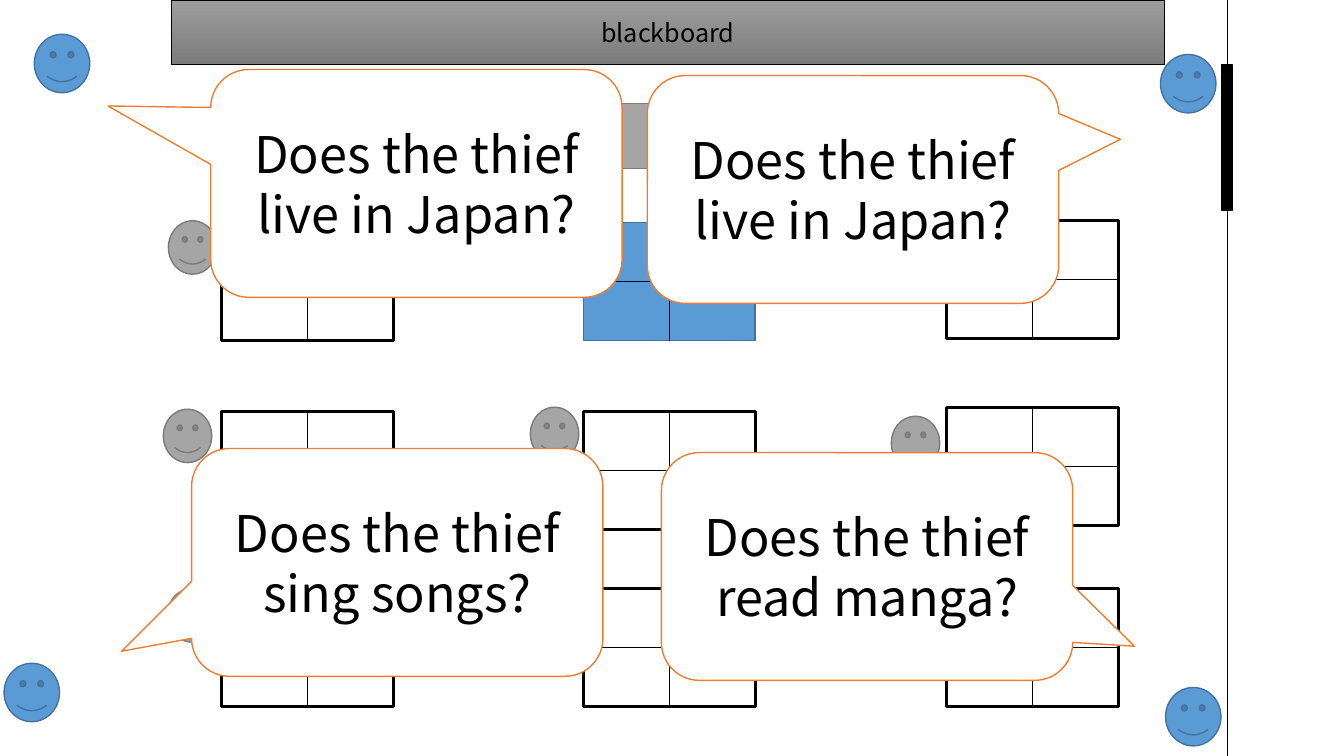
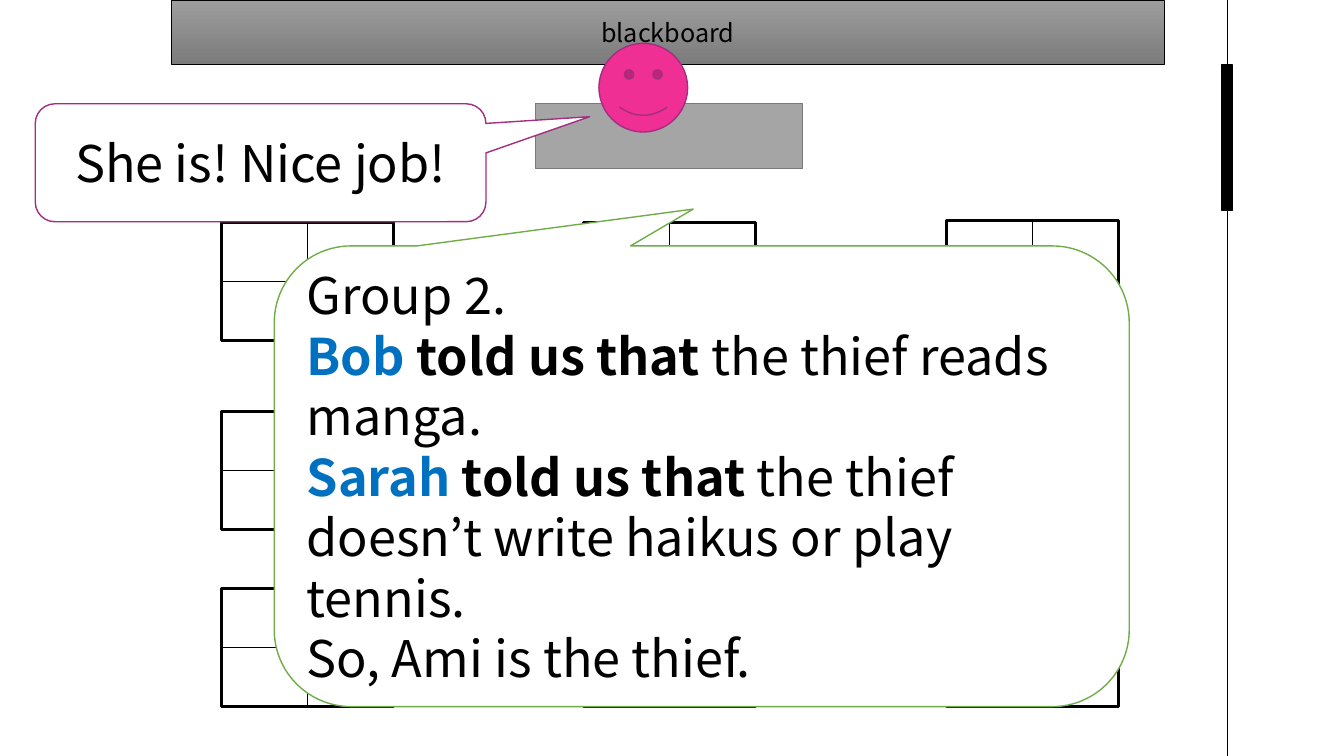
import pptx
import pptx.util
import pptx.dml.color
import pptx.enum.shapes
import pptx.enum.text
import pptx.oxml.ns
import lxml.etree
from dataclasses import dataclass

Inches = pptx.util.Inches
Shape = pptx.enum.shapes.MSO_SHAPE
Align = pptx.enum.text.PP_ALIGN


@dataclass(frozen=True)
class Theme:
    font: str = "Noto Sans CJK JP"
    label_size: int = 18
    speech_size: int = 36
    ink: str = "000000"
    paper: str = "FFFFFF"
    name: str = "0070C0"
    board_top: str = "9D9D9D"
    board_bottom: str = "7C7C7C"
    gray: str = "A5A5A5"
    gray_line: str = "7A7A7A"
    blue: str = "5B9BD5"
    blue_line: str = "43739E"
    pink: str = "EF2F94"
    pink_line: str = "A22E81"
    orange: str = "ED7D31"
    green: str = "70AD47"
    thin: float = 0.5
    normal: float = 1
    thick: float = 2.25


THEME = Theme()

BOARD = (1.7, 0, 9.85, 0.64)
TEACHER_DESK = (5.31, 1.03, 2.65, 0.64)
DOOR = (12.12, 0.64, 0.1, 1.45)
WALL_X = 12.17
SLIDE_W, SLIDE_H = 13.33, 7.5

GROUP_SIZE = (1.7, 1.17)
GROUP_COLUMNS = [
    (2.2, (2.21, 4.08, 5.84)),
    (5.79, (2.21, 4.08, 5.84)),
    (9.39, (2.19, 4.04, 5.84)),
]

INFORMANT_SIZE = (0.55, 0.58)
INFORMANTS = [(0.34, 0.34), (11.51, 0.54), (0.04, 6.58), (11.56, 6.82)]
STUDENT_SIZE = (0.48, 0.53)
STUDENTS = [(5.26, 4.04), (1.67, 2.19), (1.62, 4.06), (8.84, 4.13), (1.66, 5.84)]
TEACHER = (5.94, 0.43, 0.88, 0.88)

QUESTION_SIZE = (4.08, 2.26)
QUESTIONS = [
    ("Does the thief read manga?", (6.56, 4.49), (0.65, 0.35)),
    ("Does the thief live in Japan?", (2.09, 0.69), (-0.75, -0.34)),
    ("Does the thief sing songs?", (1.9, 4.45), (-0.67, 0.39)),
    ("Does the thief live in Japan?", (6.42, 0.75), (0.65, -0.22)),
]


def testimony(name, fact):
    return [(name, True, THEME.name), (" told us that ", True, THEME.ink), (fact, False, THEME.ink)]


def plain(text):
    return [(text, False, THEME.ink)]


ANSWER = [
    plain("Group 2."),
    testimony("Bob", "the thief reads manga."),
    testimony("Sarah", "the thief doesn’t write haikus or play tennis."),
    plain("So, Ami is the thief."),
]
ANSWER_BOX, ANSWER_TIP = (2.72, 2.44, 8.48, 4.57), (-0.01, -0.58)
PRAISE = [plain("She is! Nice job!")]
PRAISE_BOX, PRAISE_TIP = (0.35, 1.03, 4.47, 1.17), (0.73, -0.39)


def rgb(color):
    return pptx.dml.color.RGBColor.from_string(color)


def add_box(slide, kind, box, fill, line, width=THEME.normal):
    shape = slide.shapes.add_shape(kind, *map(Inches, box))
    shape.shadow.inherit = False
    shape.fill.solid()
    shape.fill.fore_color.rgb = rgb(fill)
    shape.line.color.rgb = rgb(line)
    shape.line.width = pptx.util.Pt(width)
    return shape


def add_rule(slide, start=(0, 0), end=(0, 0)):
    rule = slide.shapes.add_connector(
        pptx.enum.shapes.MSO_CONNECTOR.STRAIGHT, *map(Inches, start + end))
    rule.line.color.rgb = rgb(THEME.ink)
    rule.line.width = pptx.util.Pt(THEME.thin)
    lxml.etree.SubElement(rule._element.spPr, pptx.oxml.ns.qn("a:effectLst"))
    return rule


def write(shape, paragraphs, size, align):
    frame = shape.text_frame
    frame.word_wrap = True
    frame.vertical_anchor = pptx.enum.text.MSO_ANCHOR.MIDDLE
    for index, runs in enumerate(paragraphs):
        paragraph = frame.add_paragraph() if index else frame.paragraphs[0]
        paragraph.alignment = align
        for text, bold, color in runs:
            run = paragraph.add_run()
            run.text = text
            run.font.name = THEME.font
            run.font.size = pptx.util.Pt(size)
            run.font.bold = bold
            run.font.color.rgb = rgb(color)


def add_speech(slide, box, tip, paragraphs, line, align=Align.CENTER):
    bubble = add_box(slide, Shape.ROUNDED_RECTANGULAR_CALLOUT, box, THEME.paper, line)
    bubble.adjustments[0], bubble.adjustments[1] = tip
    write(bubble, paragraphs, THEME.speech_size, align)


def add_group(slide, corner, chosen):
    colors = (THEME.blue, THEME.blue_line) if chosen else (THEME.paper, THEME.ink, THEME.thick)
    desks = add_box(slide, Shape.RECTANGLE, corner + GROUP_SIZE, *colors)
    for first_side, last_side in ((0, 2), (1, 3)):
        seam = add_rule(slide)
        seam.begin_connect(desks, first_side)
        seam.end_connect(desks, last_side)


def add_classroom(deck, chosen=None):
    slide = deck.slides.add_slide(deck.slide_layouts[6])
    board = add_box(slide, Shape.RECTANGLE, BOARD, THEME.gray, THEME.ink, THEME.thin)
    board.fill.gradient()
    board.fill.gradient_angle = 270
    for stop, color in zip(board.fill.gradient_stops, (THEME.board_top, THEME.board_bottom)):
        stop.color.rgb = rgb(color)
    board.fill.gradient_stops[0].position = 0
    board.fill.gradient_stops[1].position = 1
    write(board, [plain("blackboard")], THEME.label_size, Align.CENTER)
    add_box(slide, Shape.RECTANGLE, TEACHER_DESK, THEME.gray, THEME.gray_line)
    for column, (left, tops) in enumerate(GROUP_COLUMNS):
        for row, top in enumerate(tops):
            add_group(slide, (left, top), (column, row) == chosen)
    add_rule(slide, (WALL_X, 0), (WALL_X, SLIDE_H))
    add_box(slide, Shape.RECTANGLE, DOOR, THEME.ink, THEME.ink)
    return slide


def add_question_slide(deck):
    slide = add_classroom(deck, chosen=(1, 0))
    for corners, size, fill, line in (
        (INFORMANTS, INFORMANT_SIZE, THEME.blue, THEME.blue_line),
        (STUDENTS, STUDENT_SIZE, THEME.gray, THEME.gray_line),
    ):
        for corner in corners:
            add_box(slide, Shape.SMILEY_FACE, corner + size, fill, line)
    for question, corner, tip in QUESTIONS:
        add_speech(slide, corner + QUESTION_SIZE, tip, [plain(question)], THEME.orange)


def add_answer_slide(deck):
    slide = add_classroom(deck)
    add_box(slide, Shape.SMILEY_FACE, TEACHER, THEME.pink, THEME.pink_line)
    add_speech(slide, ANSWER_BOX, ANSWER_TIP, ANSWER, THEME.green, Align.LEFT)
    add_speech(slide, PRAISE_BOX, PRAISE_TIP, PRAISE, THEME.pink_line)


def main():
    deck = pptx.Presentation()
    deck.slide_width, deck.slide_height = Inches(SLIDE_W), Inches(SLIDE_H)
    add_question_slide(deck)
    add_answer_slide(deck)
    deck.save("out.pptx")


if __name__ == "__main__":
    main()
